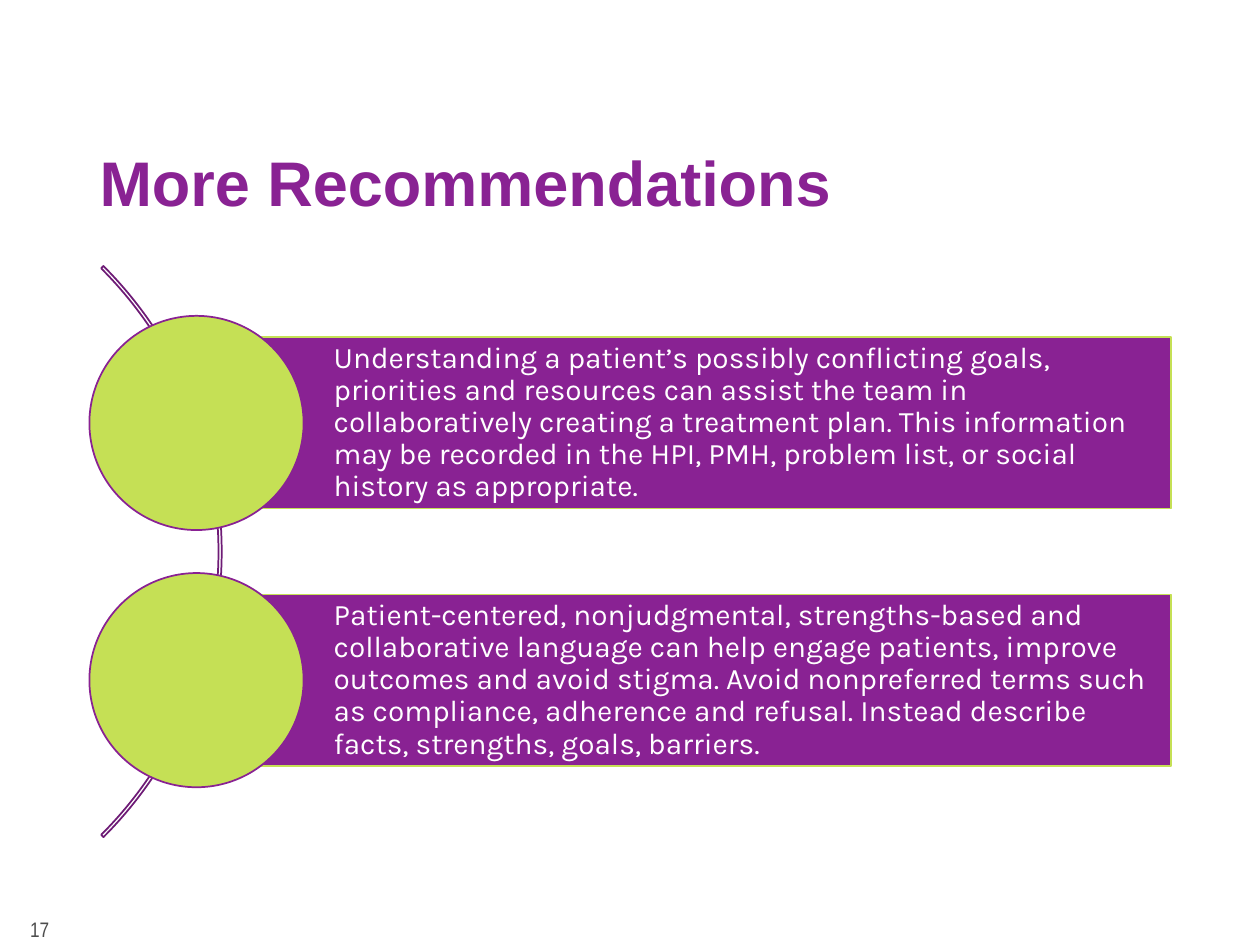
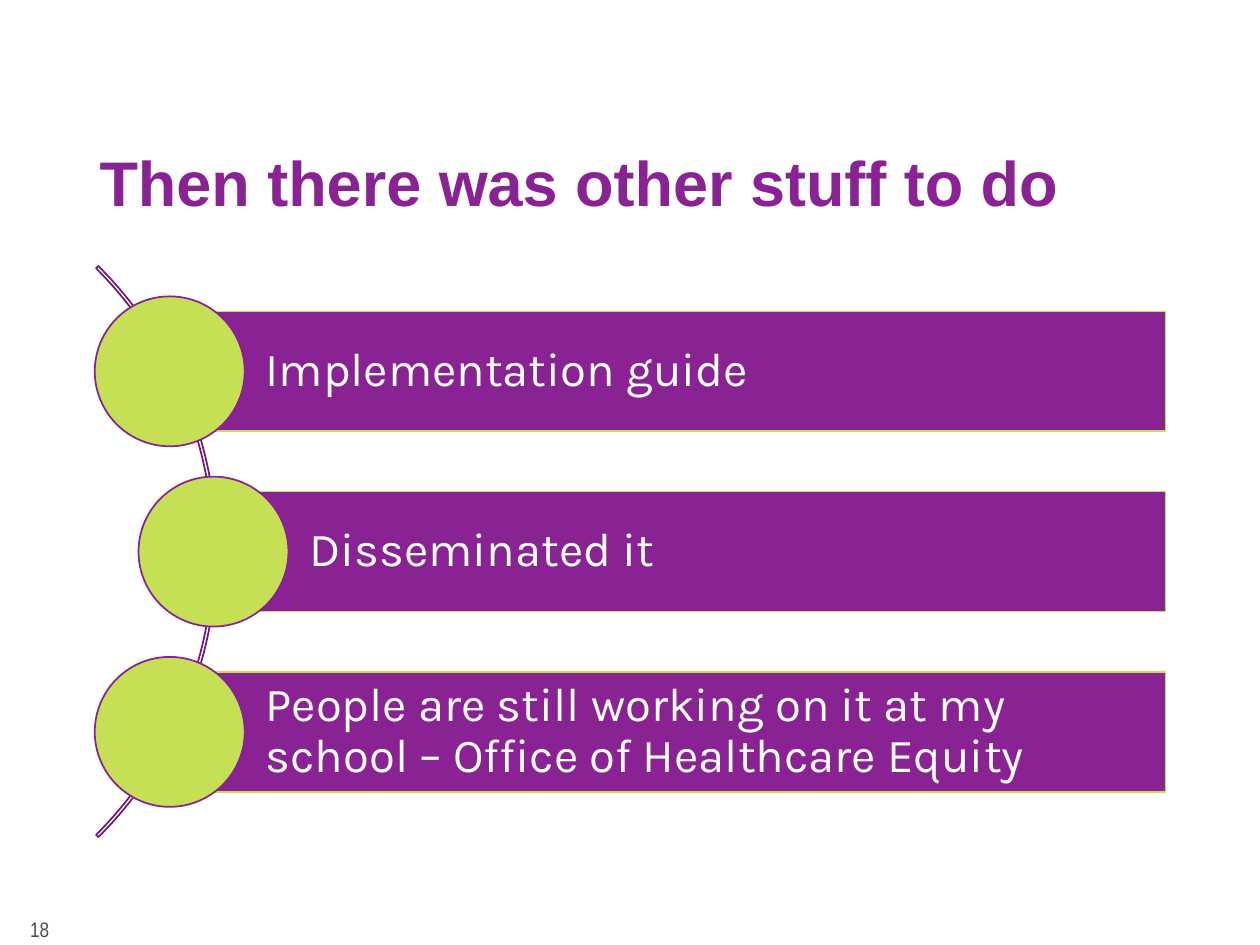
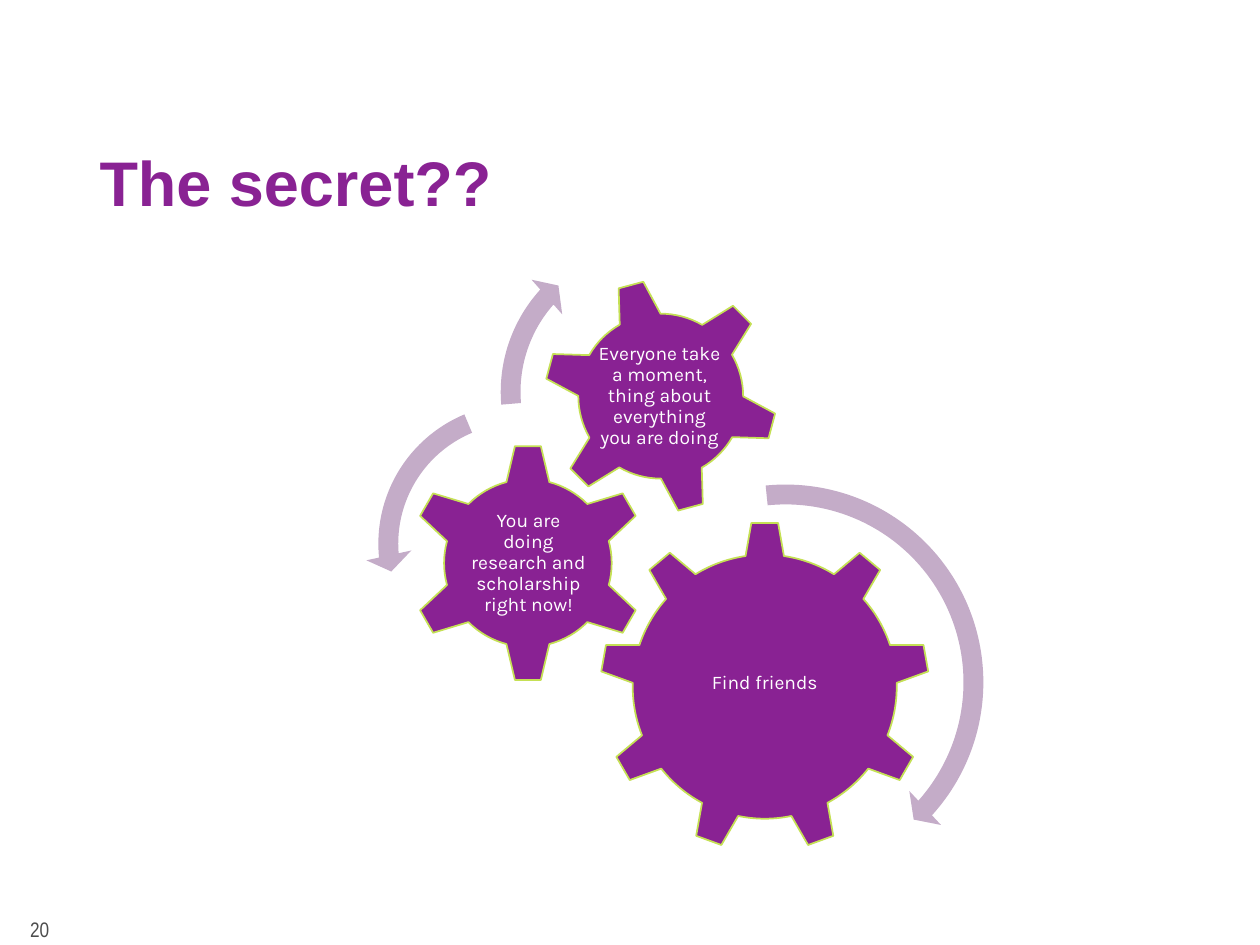
from pptx import Presentation
from pptx.dml.color import RGBColor
from pptx.enum.shapes import MSO_SHAPE
from pptx.enum.text import MSO_ANCHOR, PP_ALIGN
from pptx.util import Pt

RECT, OVAL, ARC = MSO_SHAPE.RECTANGLE, MSO_SHAPE.OVAL, MSO_SHAPE.BLOCK_ARC
GEAR6, GEAR9 = MSO_SHAPE.GEAR_6, MSO_SHAPE.GEAR_9
TURN, LEFT_TURN = MSO_SHAPE.CIRCULAR_ARROW, MSO_SHAPE.LEFT_CIRCULAR_ARROW
MIDDLE = MSO_ANCHOR.MIDDLE
LEFT, CENTER = PP_ALIGN.LEFT, PP_ALIGN.CENTER

PURPLE, LIME, PLUM, LILAC = "892293", "C5E055", "6E1B76", "C4ACC8"
WHITE, GRAY = "FFFFFF", "4D4D4D"
HEAD, BODY, SMALL = "Arial", "Karla", "Arial Narrow"

TITLE_BOX = (49.7, 79.2, 620.6, 54)
PAGE_BOX = (10.1, 522, 162, 18)
MID_Y = 315.2  # centre line of the lists
ARC_SIZE = 461.5


def color(code):
    return RGBColor.from_string(code)


def write(frame, text, font, size, ink, align=LEFT, bold=False, lead=0.9):
    frame.word_wrap = True
    frame.vertical_anchor = MIDDLE
    frame.text = text
    para = frame.paragraphs[0]
    para.alignment = align
    para.line_spacing = lead
    para.font.name, para.font.size = font, Pt(size)
    para.font.bold = bold
    para.font.color.rgb = color(ink)


def pad(frame, rest, left=None):
    """Set the insets of a frame; the left one may differ."""
    frame.margin_left = Pt(rest if left is None else left)
    frame.margin_top = frame.margin_right = frame.margin_bottom = Pt(rest)


def draw(slide, kind, box, fill=None, line=None):
    shape = slide.shapes.add_shape(kind, *map(Pt, box))
    shape.shadow.inherit = False
    if fill:
        shape.fill.solid()
        shape.fill.fore_color.rgb = color(fill)
    else:
        shape.fill.background()
    if line:
        shape.line.color.rgb = color(line)
        shape.line.width = Pt(1)
    else:
        shape.line.fill.background()
    return shape


def add_slide(deck, title, page):
    slide = deck.slides.add_slide(deck.slide_layouts[5])
    head = slide.shapes.title
    head.left, head.top, head.width, head.height = map(Pt, TITLE_BOX)
    write(head.text_frame, title, HEAD, 36, PURPLE, bold=True)
    foot = slide.shapes.add_textbox(*map(Pt, PAGE_BOX))
    write(foot.text_frame, str(page), SMALL, 12, GRAY, lead=1)
    return slide


def degrees(angle):
    """Turn an angle into the unit that adjustments use."""
    return angle * 0.6


def add_arc(slide, left):
    arc = draw(slide, ARC, (left, MID_Y - ARC_SIZE / 2, ARC_SIZE, ARC_SIZE),
               line=PLUM)
    for i, value in enumerate((degrees(315), degrees(45), 0.4 / 100)):
        arc.adjustments[i] = value


def add_list(slide, items, step, disc, right, size, inset):
    """Stack bars at equal steps, each with a disc centred on its left end."""
    high = disc * 0.8
    first = MID_Y - step * (len(items) - 1) / 2
    for i, (left, text) in enumerate(items):
        mid = first + i * step
        bar = draw(slide, RECT, (left, mid - high / 2, right - left, high),
                   PURPLE, LIME)
        pad(bar.text_frame, inset, high * 0.8)
        write(bar.text_frame, text, BODY, size, WHITE)
        draw(slide, OVAL, (left - disc / 2, mid - disc / 2, disc, disc),
             LIME, PURPLE)


def add_gear(slide, kind, spot, size, turn, text, area):
    gear = draw(slide, kind, (*spot, size, size), PURPLE, LIME)
    gear.rotation = turn
    label = slide.shapes.add_textbox(*map(Pt, area))
    pad(label.text_frame, 1.4)
    write(label.text_frame, text, BODY, 11, WHITE, CENTER)


def add_turn(slide, kind, spot, size, thick, angles, tip):
    """Draw a curved arrow; thick and tip are percentages of its size."""
    arrow = draw(slide, kind, (*spot, size, size), LILAC)
    values = (thick / 100, *map(degrees, angles), tip / 100)
    for i, value in enumerate(values):
        arrow.adjustments[i] = value


def main():
    deck = Presentation()
    deck.slide_width, deck.slide_height = Pt(720), Pt(540)

    slide = add_slide(deck, "More Recommendations", 17)
    add_arc(slide, -334.8)
    advice = (
        "Understanding a patient’s possibly conflicting goals, priorities and "
        "resources can assist the team in collaboratively creating a "
        "treatment plan. This information may be recorded in the HPI, PMH, "
        "problem list, or social history as appropriate.",
        "Patient-centered, nonjudgmental, strengths-based and collaborative "
        "language can help engage patients, improve outcomes and avoid "
        "stigma. Avoid nonpreferred terms such as compliance, adherence and "
        "refusal. Instead describe facts, strengths, goals, barriers.",
    )
    add_list(slide, [(112.3, text) for text in advice],
             step=147, disc=122.4, right=669, size=17, inset=3.6)

    slide = add_slide(deck, "Then there was other stuff to do", 18)
    add_arc(slide, -337.7)
    tasks = (
        (97, "Implementation guide"),
        (122, "Disseminated it"),
        (97, "People are still working on it at my school – "
             "Office of Healthcare Equity"),
    )
    add_list(slide, tasks, step=103, disc=85.7, right=666, size=27, inset=5)

    slide = add_slide(deck, "The secret??", 20)
    gears = (
        (GEAR9, (342.7, 298.1), 188.6, 0, "Find friends",
         (380.9, 342, 112.3, 97.2)),
        (GEAR6, (233.3, 253.4), 136.8, 0,
         "You are doing research and scholarship right now!",
         (267.8, 288, 68.4, 67.7)),
        (GEAR6, (310.3, 159.1), 134.6, 345,
         "Everyone take a moment, thing about everything you are doing",
         (339.1, 188.6, 75.6, 75.6)),
    )
    for gear in gears:
        add_gear(slide, *gear)
    turns = (
        (TURN, (328.3, 269.3), 241.2, 4.7, (4.98, 42, 264.22), 5.5),
        (LEFT_TURN, (208.8, 223.2), 175, 6.5, (7.17, 174.82, 247.3), 7.5),
        (TURN, (278.6, 129.6), 188.6, 6, (6.57, 221.9, 175.14), 7),
    )
    for turn in turns:
        add_turn(slide, *turn)

    deck.save("out.pptx")


if __name__ == "__main__":
    main()
